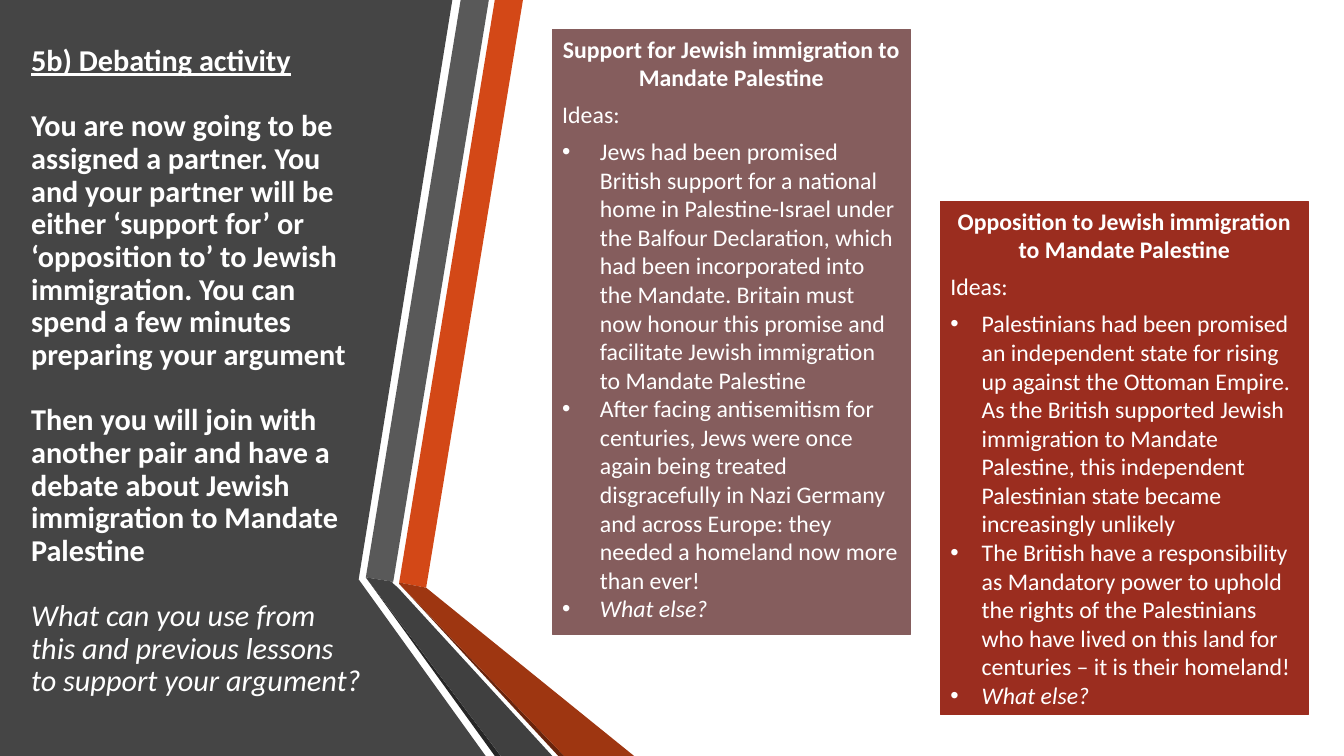
from dataclasses import dataclass

from lxml.etree import SubElement
from pptx import Presentation
from pptx.dml.color import RGBColor
from pptx.enum.shapes import MSO_SHAPE as Preset
from pptx.enum.text import MSO_ANCHOR as Anchor, MSO_AUTO_SIZE as Fit, PP_ALIGN as Align
from pptx.oxml.ns import qn
from pptx.util import Cm, Pt


@dataclass(frozen=True)
class Theme:
    font: str = "Calibri"
    text: str = "FFFFFF"
    panel: str = "454545"
    orange: str = "D34817"
    rust: str = "9E3611"
    brown: str = "69240C"
    grey: str = "595959"
    dark: str = "404040"
    black: str = "262626"
    mauve: str = "855D5D"
    red: str = "9B2D1F"
    title: float = 21.6
    body: float = 17
    gap: float = 23.3


@dataclass(frozen=True)
class Band:
    color: str
    points: tuple[tuple[float, float], ...]


@dataclass(frozen=True)
class Side:
    color: str
    box: tuple[float, float, float, float]
    indent: float
    head: str
    ideas: tuple[str, ...]


@dataclass(frozen=True)
class Line:
    text: str
    bold: bool = True
    italic: bool = False
    under: bool = False


THEME = Theme()
WIDE, HIGH = 33.87, 19.05

PANEL = Band(THEME.panel, ((0, 0), (11.4, 0), (9.04, 14.6), (12.24, HIGH), (0, HIGH)))
BANDS = (
    Band(THEME.orange, ((10.06, 14.68), (10.74, 14.81), (13.18, 0), (12.47, 0))),
    Band(THEME.grey, ((12.32, 0), (11.61, 0), (9.22, 14.55), (9.91, 14.66))),
    Band(THEME.black, ((9.22, 14.55), (12.47, HIGH), (12.62, HIGH))),
    Band(THEME.brown, ((10.06, 14.71), (14.07, HIGH), (14.22, HIGH))),
    Band(THEME.rust, ((10.06, 14.71), (14.22, HIGH), (15.98, HIGH),
                      (10.74, 14.81), (10.06, 14.68))),
    Band(THEME.dark, ((13.92, HIGH), (10.03, 14.81), (9.88, 14.68),
                      (9.91, 14.66), (9.22, 14.55), (12.62, HIGH))),
)

SIDES = (
    Side(THEME.mauve, (13.92, 0.74, 9.02, 15.24), 0.95,
         "Support for Jewish immigration to Mandate Palestine", (
             "Jews had been promised British support for a national home in "
             "Palestine-Israel under the Balfour Declaration, which had been "
             "incorporated into the Mandate. Britain must now honour this promise "
             "and facilitate Jewish immigration to Mandate Palestine",
             "After facing antisemitism for centuries, Jews were once again being "
             "treated disgracefully in Nazi Germany and across Europe: they needed "
             "a homeland now more than ever!")),
    Side(THEME.red, (23.7, 5.08, 9.27, 12.93), 0.79,
         "Opposition to Jewish immigration to Mandate Palestine", (
             "Palestinians had been promised an independent state for rising up "
             "against the Ottoman Empire. As the British supported Jewish "
             "immigration to Mandate Palestine, this independent Palestinian state "
             "became increasingly unlikely",
             "The British have a responsibility as Mandatory power to uphold the "
             "rights of the Palestinians who have lived on this land for centuries "
             "– it is their homeland!")),
)

TASK = (
    Line("5b) Debating activity", under=True),
    Line("You are now going to be assigned a partner. You and your partner will be "
         "either ‘support for’ or ‘opposition to’ to Jewish immigration. You can "
         "spend a few minutes preparing your argument"),
    Line("Then you will join with another pair and have a debate about Jewish "
         "immigration to Mandate Palestine"),
    Line("What can you use from this and previous lessons to support your argument?",
         bold=False, italic=True),
)


def write(frame, index: int, line: Line, size: float, align=Align.LEFT):
    """Fill the first paragraph of a frame, or add the next one."""
    para = frame.add_paragraph() if index else frame.paragraphs[0]
    para.text = line.text
    para.alignment = align
    font = para.font
    font.name, font.size = THEME.font, Pt(size)
    font.bold, font.italic, font.underline = line.bold, line.italic, line.under
    font.color.rgb = RGBColor.from_string(THEME.text)
    return para


def add_bullet(para, indent: float) -> None:
    props = para._p.get_or_add_pPr()
    props.set("marL", str(Cm(indent)))
    props.set("indent", str(-Cm(indent)))
    SubElement(props, qn("a:buFont"), typeface="Arial")
    SubElement(props, qn("a:buChar"), char="•")


def paint(shape, color: str) -> None:
    shape.shadow.inherit = False
    shape.fill.solid()
    shape.fill.fore_color.rgb = RGBColor.from_string(color)


def draw_band(shapes, band: Band) -> None:
    first, *rest = [(Cm(x), Cm(y)) for x, y in band.points]
    pen = shapes.build_freeform(*first)
    pen.add_line_segments(rest, close=True)
    shape = pen.convert_to_shape()
    paint(shape, band.color)
    shape.line.fill.background()


def draw_side(shapes, side: Side) -> None:
    shape = shapes.add_shape(Preset.RECTANGLE, *map(Cm, side.box))
    paint(shape, side.color)
    shape.line.color.rgb = RGBColor.from_string(side.color)
    shape.line.width = Pt(0.75)
    frame = shape.text_frame
    frame.word_wrap = True
    frame.vertical_anchor = Anchor.TOP
    head = write(frame, 0, Line(side.head), THEME.body, Align.CENTER)
    label = write(frame, 1, Line("Ideas:", bold=False), THEME.body)
    head.space_after = label.space_after = Pt(6)
    ideas = [Line(idea, bold=False) for idea in side.ideas]
    ideas.append(Line("What else?", bold=False, italic=True))
    for index, idea in enumerate(ideas, 2):
        add_bullet(write(frame, index, idea, THEME.body), side.indent)


def set_title(title) -> None:
    title.left, title.top, title.width, title.height = map(Cm, (0.53, 1.24, 8.89, 17.09))
    title.element.getparent().append(title.element)  # in front of the panel
    frame = title.text_frame
    frame.word_wrap = True
    frame.auto_size = Fit.NONE
    frame.vertical_anchor = Anchor.MIDDLE
    frame.margin_bottom = Cm(0.95)
    for index, line in enumerate(TASK):
        para = write(frame, index, line, THEME.title)
        para.line_spacing = 0.9
        para.space_before = Pt(THEME.gap if index else 0)


def main() -> None:
    deck = Presentation()
    deck.slide_width, deck.slide_height = Cm(WIDE), Cm(HIGH)
    slide = deck.slides.add_slide(deck.slide_layouts[5])
    shapes = slide.shapes
    draw_band(shapes, PANEL)
    group = shapes.add_group_shape()
    for band in BANDS:
        draw_band(group.shapes, band)
    for side in SIDES:
        draw_side(shapes, side)
    set_title(shapes.title)
    deck.save("out.pptx")


if __name__ == "__main__":
    main()
